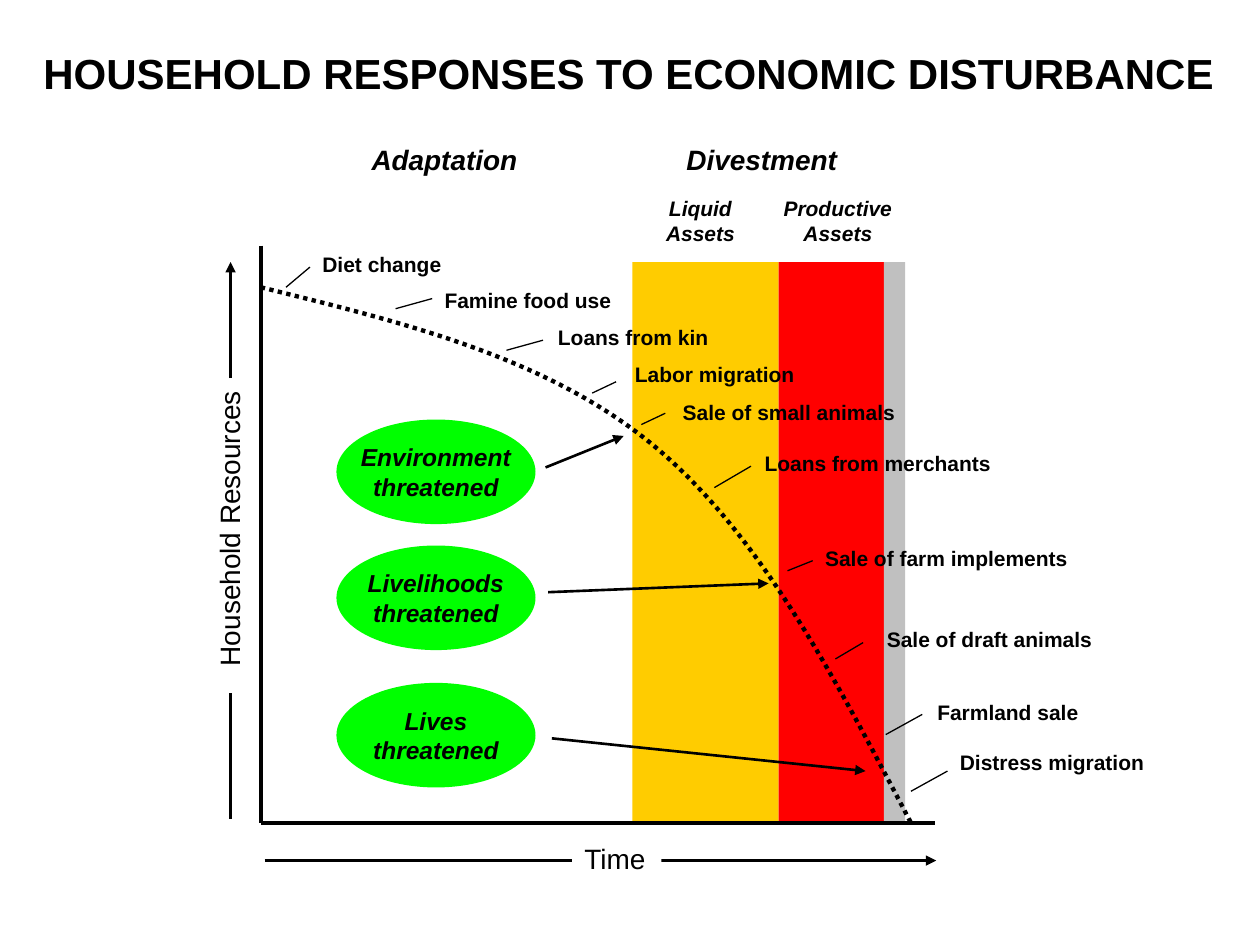
from lxml.etree import SubElement
from pptx import Presentation
from pptx.dml.color import RGBColor
from pptx.enum.dml import MSO_LINE
from pptx.enum.shapes import MSO_CONNECTOR, MSO_SHAPE
from pptx.enum.text import MSO_ANCHOR, MSO_AUTO_SIZE, PP_ALIGN
from pptx.oxml.ns import qn
from pptx.util import Emu, Inches, Pt

BLACK = RGBColor(0, 0, 0)
WHITE = RGBColor(255, 255, 255)
GREY = RGBColor(0xC0, 0xC0, 0xC0)
RED = RGBColor(255, 0, 0)
AMBER = RGBColor(0xFF, 0xCC, 0)
GREEN = RGBColor(0, 255, 0)

SLIDE_W, SLIDE_H = Inches(10), Inches(7.5)
CELL = SLIDE_W / 100  # square grid: 100 columns by 75 rows

AXIS_X, AXIS_Y = 20.7, 65.3
BAND_TOP = 20.8
BANDS = [(50.2, 61.8, AMBER), (61.8, 70.15, RED), (70.15, 71.85, GREY)]
CURVE = [(20.7, 22.8), (32, 25.6), (43.3, 28.3), (51.8, 35.3),
         (60.4, 42.4), (66.3, 53.9), (72.3, 65.3)]

# text, label left, top and width, then the leader from label to curve
RESPONSES = [
    ("Diet change", (24.6, 19.5, 11.5), (24.6, 21.2, 22.7, 22.8)),
    ("Famine food use", (34.3, 22.3, 15.3), (34.3, 23.7, 31.4, 24.5)),
    ("Loans from kin", (43.3, 25.3, 14), (43.1, 27, 40.2, 27.8)),
    ("Labor migration", (49.4, 28.2, 14.7), (48.9, 30.3, 47, 31.2)),
    ("Sale of small animals", (53.2, 31.2, 18.9), (52.8, 32.8, 50.9, 33.7)),
    ("Loans from merchants", (59.7, 35.3, 20), (59.6, 37, 56.7, 38.7)),
    ("Sale of farm implements", (64.5, 42.8, 21.3), (64.5, 44.5, 62.5, 45.3)),
    ("Sale of draft animals", (69.4, 49.2, 18.3), (68.5, 51, 66.3, 52.3)),
    ("Farmland sale", (73.4, 55, 13.2), (73.2, 56.7, 70.3, 58.3)),
    ("Distress migration", (75.2, 59, 16.6), (75.2, 61.2, 72.3, 62.8)),
]

# first line of text, oval top, arrow to the curve
THREATS = [
    ("Environment", 33.3, (43.3, 37.1, 49.5, 34.6)),
    ("Livelihoods", 43.3, (43.5, 47, 61, 46.3)),
    ("Lives", 54.2, (43.8, 58.6, 68.7, 61.2)),
]


def grid(*cells):
    return [Emu(round(c * CELL)) for c in cells]


def write(s, lines, size, bold=False, italic=False, align=PP_ALIGN.LEFT,
          wrap=False):
    tf = s.text_frame
    tf.word_wrap = wrap
    for i, line in enumerate(lines):
        p = tf.add_paragraph() if i else tf.paragraphs[0]
        p.alignment = align
        r = p.add_run()
        r.text = line
        r.font.name = "Arial"
        r.font.size = Pt(size)
        r.font.bold = bold
        r.font.italic = italic
        r.font.color.rgb = BLACK
    return tf


def add_label(slide, lines, box, size, **style):
    s = slide.shapes.add_textbox(*grid(*box))
    write(s, lines, size, **style).auto_size = MSO_AUTO_SIZE.SHAPE_TO_FIT_TEXT
    return s


def add_block(slide, kind, box, color):
    s = slide.shapes.add_shape(kind, *grid(*box))
    s.shadow.inherit = False
    s.fill.solid()
    s.fill.fore_color.rgb = color
    s.line.fill.background()
    return s


def add_line(slide, ends, width, arrow=False):
    """Draw a straight line; an arrow points at the second end."""
    c = slide.shapes.add_connector(MSO_CONNECTOR.STRAIGHT, *grid(*ends))
    c.line.width = Pt(width)
    c.line.color.rgb = BLACK
    if arrow:
        SubElement(c.line._get_or_add_ln(), qn("a:tailEnd"), type="triangle")
    SubElement(c._element.spPr, qn("a:effectLst"))


def add_curve(slide, points):
    """Draw a dotted Bezier curve: a start, then three points a segment."""
    start, *rest = [grid(*pt) for pt in points]
    builder = slide.shapes.build_freeform(*start)
    builder.add_line_segments(rest, close=False)
    s = builder.convert_to_shape()
    steps = list(s._element.iter(qn("a:lnTo")))
    outline = steps[0].getparent()
    for i in range(0, len(steps), 3):
        bezier = SubElement(outline, qn("a:cubicBezTo"))
        for step in steps[i:i + 3]:
            bezier.append(step[0])
            outline.remove(step)
    s.shadow.inherit = False
    s.fill.background()
    s.line.color.rgb = BLACK
    s.line.width = Pt(2.5)
    s.line.dash_style = MSO_LINE.ROUND_DOT


def add_title(slide, text):
    s = slide.shapes.title
    s.left, s.top, s.width, s.height = grid(2.4, 3.3, 95, 5)
    tf = write(s, [text], 24, bold=True, align=PP_ALIGN.CENTER)
    tf.auto_size = MSO_AUTO_SIZE.NONE
    tf.vertical_anchor = MSO_ANCHOR.MIDDLE


def add_chart_area(slide):
    for left, right, color in BANDS:
        add_block(slide, MSO_SHAPE.RECTANGLE,
                  (left, BAND_TOP, right - left, AXIS_Y - BAND_TOP), color)
    add_line(slide, (AXIS_X, 19.5, AXIS_X, AXIS_Y), 2.25)
    add_line(slide, (AXIS_X, AXIS_Y, 74.2, AXIS_Y), 2.25)
    add_curve(slide, CURVE)


def add_axis_names(slide):
    add_line(slide, (21, 68.3, 74.3, 68.3), 1.5, arrow=True)
    time = add_block(slide, MSO_SHAPE.RECTANGLE, (45.4, 66.3, 7.1, 3.7), WHITE)
    write(time, ["Time"], 16, wrap=True)
    add_line(slide, (18.3, 30, 18.3, 20.8), 1.5, arrow=True)
    add_line(slide, (18.3, 55, 18.3, 65), 1.5)
    s = add_label(slide, ["Household Resources"], (6.3, 40.1, 23.8, 3.7), 16)
    s.rotation = 270


def add_headings(slide):
    style = dict(bold=True, italic=True)
    add_label(slide, ["Adaptation"], (28.5, 10.8, 15.2, 3.7), 16,
              wrap=True, **style)
    add_label(slide, ["Divestment"], (53.5, 10.8, 14, 3.7), 16, **style)
    for name, left, width in (("Liquid", 51.6, 8), ("Productive", 61, 11)):
        add_label(slide, [name, "Assets"], (left, 15, width, 5), 12,
                  align=PP_ALIGN.CENTER, **style)


def add_threat(slide, name, top, arrow):
    s = add_block(slide, MSO_SHAPE.OVAL, (26.7, top, 15.8, 8.3), GREEN)
    tf = write(s, [name, "threatened"], 14, bold=True, italic=True,
               align=PP_ALIGN.CENTER)
    tf.vertical_anchor = MSO_ANCHOR.MIDDLE
    add_line(slide, arrow, 1.5, arrow=True)


def main():
    prs = Presentation()
    prs.slide_width, prs.slide_height = SLIDE_W, SLIDE_H
    slide = prs.slides.add_slide(prs.slide_layouts.get_by_name("Title Only"))
    add_title(slide, "HOUSEHOLD RESPONSES TO ECONOMIC DISTURBANCE")
    add_chart_area(slide)
    for text, (left, top, width), leader in RESPONSES:
        add_label(slide, [text], (left, top, width, 3), 12, bold=True)
        add_line(slide, leader, 0.75)
    add_headings(slide)
    add_axis_names(slide)
    for threat in THREATS:
        add_threat(slide, *threat)
    prs.save("out.pptx")


if __name__ == "__main__":
    main()
